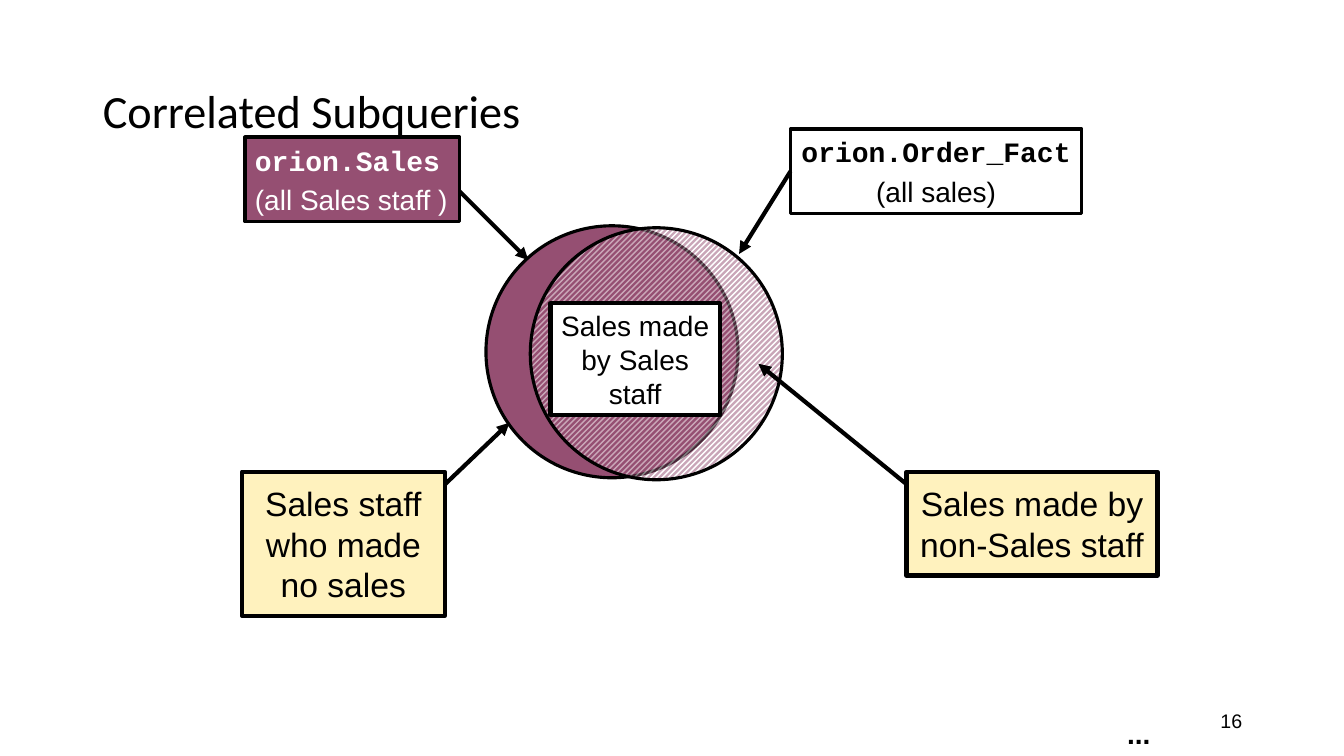
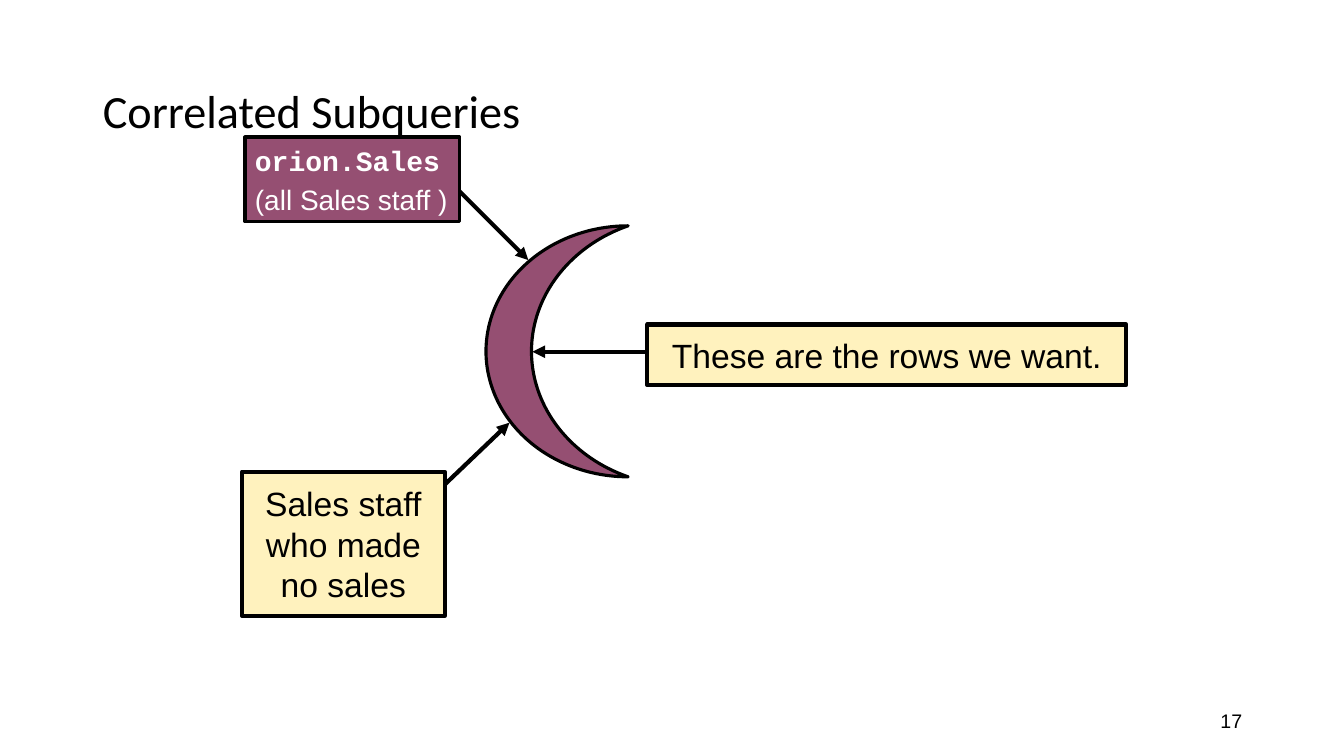
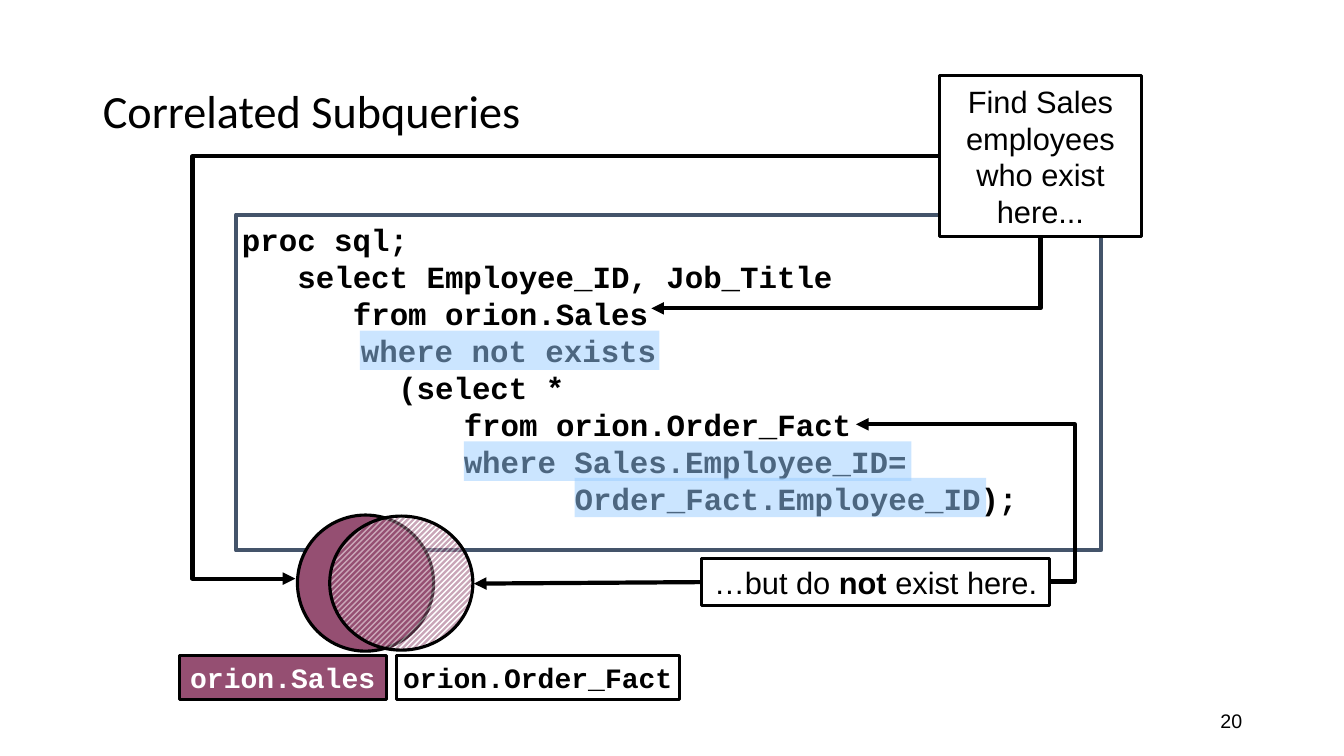
from lxml import etree
from pptx import Presentation
from pptx.dml.color import RGBColor
from pptx.enum.dml import MSO_PATTERN
from pptx.enum.shapes import MSO_CONNECTOR, MSO_SHAPE
from pptx.enum.text import MSO_ANCHOR, MSO_AUTO_SIZE, PP_ALIGN
from pptx.oxml.ns import qn
from pptx.util import Pt

PX = 9144
COLORS = {
    "black": "000000",
    "white": "FFFFFF",
    "plum": "954F72",
    "cream": "FFF2BE",
    "slate": "44546A",
    "highlight": "99CCFF",
}
SANS, MONO, TITLE_FONT = "Arial", "Courier New", "Calibri"
TITLE = "Correlated Subqueries"
CODE_SIZE = 22
CODE = [
    (0, "proc sql;"),
    (55, "select Employee_ID, Job_Title"),
    (110, "from orion.Sales"),
    (118, "where not exists"),
    (155, "(select *"),
    (220, "from orion.Order_Fact"),
    (220, "where Sales.Employee_ID="),
    (330, "Order_Fact.Employee_ID);"),
]


def emu(*lengths):
    """Turn px lengths into EMU."""
    return [round(length * PX) for length in lengths]


def rgb(color):
    """Look up a named colour."""
    return RGBColor.from_string(COLORS[color])


def set_alpha(properties, percent):
    """Give every colour below an element the same opacity."""
    for color in properties.findall(".//" + qn("a:srgbClr")):
        etree.SubElement(color, qn("a:alpha")).set("val", str(percent * 1000))


def add_arrowhead(shape):
    """Put a triangle at the far end of a shape's line."""
    outline = shape._element.spPr.find(qn("a:ln"))
    etree.SubElement(outline, qn("a:tailEnd")).set("type", "triangle")


def add_run(paragraph, text, size, font=SANS, color="black", bold=False):
    """Append one formatted run."""
    run = paragraph.add_run()
    run.text = text
    run.font.size = Pt(size)
    run.font.name = font
    run.font.bold = bold
    run.font.color.rgb = rgb(color)


def set_text(shape, lines, align=PP_ALIGN.CENTER, wrap=True, insets=(10, 5),
             anchor=MSO_ANCHOR.MIDDLE, gap=0, indents=None):
    """Fill a shape with paragraphs, each a list of run arguments."""
    frame = shape.text_frame
    frame.word_wrap = wrap
    frame.auto_size = MSO_AUTO_SIZE.NONE
    frame.vertical_anchor = anchor
    across, down = emu(*insets)
    frame.margin_left = frame.margin_right = across
    frame.margin_top = frame.margin_bottom = down
    for index, runs in enumerate(lines):
        paragraph = frame.add_paragraph() if index else frame.paragraphs[0]
        paragraph.alignment = align
        if index and gap:
            paragraph.space_before = Pt(gap)
        if indents:
            paragraph._p.get_or_add_pPr().set("marL", str(emu(indents[index])[0]))
        for run in runs:
            add_run(paragraph, *run)


def add_figure(slide, preset, frame, fill=None, line="black", weight=2.25):
    """Add a flat preset shape."""
    figure = slide.shapes.add_shape(preset, *emu(*frame))
    figure.shadow.inherit = False
    if fill:
        figure.fill.solid()
        figure.fill.fore_color.rgb = rgb(fill)
    else:
        figure.fill.background()
    if line:
        figure.line.color.rgb = rgb(line)
        figure.line.width = Pt(weight)
    else:
        figure.line.fill.background()
    return figure


def add_label(slide, frame, lines, fill="white", weight=2.25, **text):
    """Add an outlined rectangle with text."""
    label = add_figure(slide, MSO_SHAPE.RECTANGLE, frame, fill, weight=weight)
    set_text(label, lines, **text)
    return label


def add_callout(slide, frame, text, pointer):
    """Add a cream callout whose pointer ends in an arrowhead."""
    callout = add_figure(slide, MSO_SHAPE.LINE_CALLOUT_1, frame, "cream", weight=3)
    for index, value in enumerate(pointer):
        callout.adjustments[index] = value
    add_arrowhead(callout)
    set_text(callout, [[(text, 24)]], insets=(10, 10))


def add_arrow(slide, begin, end, kind=MSO_CONNECTOR.STRAIGHT, source=None, side=0):
    """Add a black arrow, joined to a source shape if there is one."""
    arrow = slide.shapes.add_connector(kind, *emu(*begin, *end))
    if source:
        arrow.begin_connect(source, side)
    arrow.line.color.rgb = rgb("black")
    arrow.line.width = Pt(3)
    add_arrowhead(arrow)
    etree.SubElement(arrow._element.spPr, qn("a:effectLst"))
    return arrow


def add_elbow(slide, begin, end, bend):
    """Add an arrow with two bends, the first at a share of its width."""
    arrow = add_arrow(slide, begin, end, MSO_CONNECTOR.ELBOW)
    guides = arrow._element.spPr.find(qn("a:prstGeom")).get_or_add_avLst()
    guide = etree.SubElement(guides, qn("a:gd"))
    guide.set("name", "adj1")
    guide.set("fmla", f"val {round(bend * 100000)}")


def add_corner(slide, begin, end):
    """Add an arrow that runs down and then turns left."""
    middle_x, middle_y = (begin[0] + end[0]) / 2, (begin[1] + end[1]) / 2
    half_width, half_height = (end[1] - begin[1]) / 2, (begin[0] - end[0]) / 2
    arrow = add_arrow(slide, (middle_x - half_width, middle_y - half_height),
                      (middle_x + half_width, middle_y + half_height),
                      MSO_CONNECTOR.ELBOW)
    properties = arrow._element.spPr
    properties.find(qn("a:xfrm")).set("rot", "5400000")
    properties.find(qn("a:prstGeom")).set("prst", "bentConnector2")


def add_sales_circle(slide, frame):
    """Add the solid circle of Sales staff."""
    add_figure(slide, MSO_SHAPE.OVAL, frame, "plum")


def add_orders_circle(slide, frame):
    """Add the translucent hatched circle of orders."""
    circle = add_figure(slide, MSO_SHAPE.OVAL, frame)
    circle.fill.patterned()
    circle.fill.pattern = MSO_PATTERN.WIDE_UPWARD_DIAGONAL
    circle.fill.fore_color.rgb = rgb("white")
    circle.fill.back_color.rgb = rgb("plum")
    set_alpha(circle._element.spPr.find(qn("a:pattFill")), 50)


def add_highlight(slide, frame):
    """Add a translucent band over code."""
    band = add_figure(slide, MSO_SHAPE.RECTANGLE, frame, "highlight", line=None)
    set_alpha(band._element.spPr.find(qn("a:solidFill")), 50)


def add_staff_notes(slide):
    """Add the notes on Sales staff at the left."""
    add_callout(slide, (240, 468, 201, 143), "Sales staff who made no sales",
                (0.09, 1, -0.34, 1.32))
    add_arrow(slide, (450, 184), (524, 258))
    add_label(slide, (243, 136, 213, 84),
              [[("orion.Sales", 20, MONO, "white", True)],
               [("(all Sales staff )", 20, SANS, "white")]],
              "plum", align=PP_ALIGN.LEFT, wrap=False, gap=4)


def start_slide(deck, number):
    """Add a slide with the shared title and its number."""
    slide = deck.slides.add_slide(deck.slide_layouts[5])
    title = slide.shapes.title
    title.left, title.top, title.width, title.height = emu(92, 40, 1150, 145)
    set_text(title, [[(TITLE, 33, TITLE_FONT)]], align=PP_ALIGN.LEFT)
    title.text_frame.paragraphs[0].line_spacing = 0.9
    page = slide.shapes.add_textbox(*emu(942, 695, 300, 40))
    set_text(page, [[(str(number), 14)]], align=PP_ALIGN.RIGHT)
    return slide


def build_overlap(deck):
    """Show how staff and sales overlap."""
    slide = start_slide(deck, 16)
    add_sales_circle(slide, (482, 224, 250, 250))
    orders = add_label(slide, (784, 128, 289, 84),
                       [[("orion.Order_Fact", 20, MONO, "black", True)],
                        [("(all sales)", 20)]], wrap=False, gap=4)
    add_arrow(slide, (784, 170), (733, 252), source=orders, side=1)
    add_orders_circle(slide, (526, 226, 250, 250))
    add_label(slide, (546, 301, 168, 111), [[("Sales made by Sales staff", 20)]],
              weight=3)
    add_callout(slide, (899, 468, 249, 103), "Sales made by non-Sales staff",
                (0.12, 0, -1.04, -0.59))
    more = slide.shapes.add_textbox(*emu(1108, 706, 43, 44))
    set_text(more, [[("...", 20, SANS, "black", True)]], wrap=False,
             anchor=MSO_ANCHOR.TOP)
    add_staff_notes(slide)


def build_remainder(deck):
    """Show the staff left over without sales."""
    slide = start_slide(deck, 17)
    crescent = add_figure(slide, MSO_SHAPE.MOON, (482, 224, 141, 249), "plum")
    crescent.adjustments[0] = 0.32
    add_callout(slide, (642, 322, 475, 60), "These are the rows we want.",
                (0.45, 0, 0.45, -0.24))
    add_staff_notes(slide)


def build_query(deck):
    """Show the query and the tables it reads."""
    slide = start_slide(deck, 20)
    query = add_figure(slide, MSO_SHAPE.RECTANGLE, (234, 213, 858, 333), "white",
                       "slate", 3)
    set_text(query, [[(text, CODE_SIZE, MONO, "black", True)] for _, text in CODE],
             align=PP_ALIGN.LEFT, insets=(6, 6), anchor=MSO_ANCHOR.TOP,
             indents=[indent for indent, _ in CODE])
    for left, top, width in [(460, 438, 444), (570, 474, 408), (357, 328, 297)]:
        add_highlight(slide, (left, top, width, 39))
    add_corner(slide, (1032, 236), (646, 306))
    add_label(slide, (932, 75, 200, 160),
              [[("Find Sales employees who exist here...", 22)]])
    absent = add_label(slide, (696, 554, 345, 47),
                       [[("…but do ", 22), ("not", 22, SANS, "black", True),
                         (" exist here.", 22)]], wrap=False)
    add_elbow(slide, (1041, 577), (849, 421), -0.13)
    add_elbow(slide, (930, 155), (293, 574), 1.16)
    add_arrow(slide, (696, 577), (470, 579), source=absent, side=1)
    add_sales_circle(slide, (295, 511, 135, 135))
    add_label(slide, (178, 650, 205, 44),
              [[("orion.Sales", 20, MONO, "white", True)]], "plum", wrap=False)
    add_orders_circle(slide, (327, 512, 142, 133))
    add_label(slide, (393, 650, 281, 44),
              [[("orion.Order_Fact", 20, MONO, "black", True)]], None,
              wrap=False, insets=(6, 5))


def main():
    """Build and save the deck."""
    deck = Presentation()
    deck.slide_width, deck.slide_height = emu(1333, 750)
    build_overlap(deck)
    build_remainder(deck)
    build_query(deck)
    deck.save("out.pptx")


if __name__ == "__main__":
    main()
